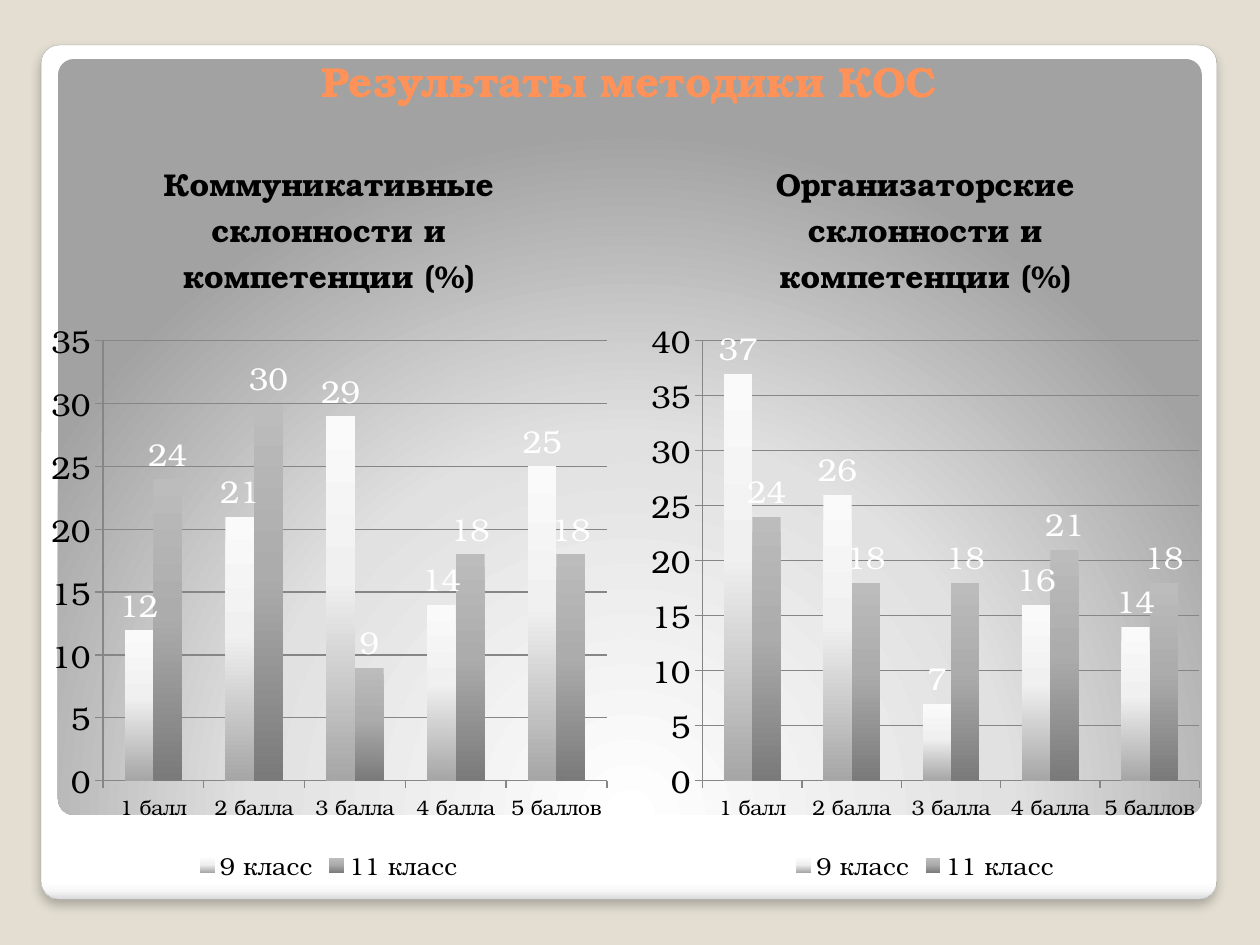
from lxml.etree import SubElement
from pptx import Presentation
from pptx.chart.data import CategoryChartData as ChartData
from pptx.dml.color import RGBColor as RGB
from pptx.enum.chart import XL_CHART_TYPE as CT, XL_LABEL_POSITION as LP
from pptx.enum.chart import XL_LEGEND_POSITION as LEG, XL_TICK_MARK as TICK
from pptx.enum.shapes import MSO_SHAPE as SHAPE
from pptx.enum.text import PP_ALIGN as ALIGN
from pptx.oxml import parse_xml
from pptx.oxml.ns import nsdecls, qn
from pptx.util import Cm, Pt

FONT = "TeX Gyre Bonum"
COLORS = {"back": "E3DED1", "title": "FF9258", "text": "000000",
          "label": "FFFFFF", "edge": "A4A4A4", "grid": "868686"}
FRAME_STOPS = [(0, "FFFFFF"), (98, "FFFFFF"), (99, "F7F7F7"), (100, "DADADA")]
PANEL_STOPS = [(0, "FFFFFF"), (55, "E1E1E1"), (100, "A2A2A2")]
BAR_STOPS = [[(0, "FAFAFA"), (45, "F0F0F0"), (100, "A6A6A6")],
             [(0, "BCBCBC"), (45, "ACACAC"), (100, "7A7A7A")]]
SCORES = ["1 балл", "2 балла", "3 балла", "4 балла", "5 баллов"]
CLASSES = ["9 класс", "11 класс"]
CHARTS = [
    ("Коммуникативные склонности и компетенции (%)", 35,
     [(12, 21, 29, 14, 25), (24, 30, 9, 18, 18)], (0.79, 2.59, 11.68, 15.29)),
    ("Организаторские склонности и компетенции (%)", 40,
     [(37, 26, 7, 16, 14), (24, 18, 18, 21, 18)], (12.9, 2.59, 11.51, 15.29)),
]


def set_font(font, size, color, bold=False):
    """Give a font the slide's typeface, a size and a colour."""
    font.name, font.size, font.bold = FONT, Pt(size), bold
    font.color.rgb = RGB.from_string(COLORS[color])


def fill_gradient(fill, element, stops, radial=False):
    """Fill with a vertical gradient, or one circling below the box."""
    fill.gradient()
    grad = next(element.iter(qn("a:gradFill")))
    for child in list(grad):
        grad.remove(child)
    gs_list = SubElement(grad, qn("a:gsLst"))
    for pos, color in stops:
        gs = SubElement(gs_list, qn("a:gs"), pos=str(pos * 1000))
        SubElement(gs, qn("a:srgbClr"), val=color)
    if radial:
        circle = SubElement(grad, qn("a:path"), path="circle")
        SubElement(circle, qn("a:fillToRect"),
                   l="50000", t="175000", r="50000", b="-75000")
    else:
        SubElement(grad, qn("a:lin"), ang="5400000", scaled="0")


def add_card(s, box, stops, radial=False):
    """Add a softly rounded card with a gradient and no outline."""
    sp = s.shapes.add_shape(SHAPE.ROUNDED_RECTANGLE, *map(Cm, box))
    sp.adjustments[0] = 0.021
    sp.shadow.inherit = False
    sp.line.fill.background()
    fill_gradient(sp.fill, sp._element, stops, radial)
    return sp


def add_background(s):
    """Add the white frame with its shadow and the grey panel."""
    fill = s.background.fill
    fill.solid()
    fill.fore_color.rgb = RGB.from_string(COLORS["back"])
    frame = add_card(s, (0.83, 0.91, 23.7, 17.22), FRAME_STOPS)
    frame.line.color.rgb = RGB.from_string(COLORS["edge"])
    frame.line.width = Pt(0.16)
    effects = next(frame._element.iter(qn("a:effectLst")))
    effects.append(parse_xml(
        f'<a:outerShdw {nsdecls("a")} blurRad="76200" dist="50800" dir="5400000"'
        ' algn="tl" rotWithShape="0"><a:srgbClr val="000000">'
        '<a:alpha val="25000"/></a:srgbClr></a:outerShdw>'))
    add_card(s, (1.17, 1.19, 23.06, 15.24), PANEL_STOPS, radial=True)


def add_title(s, box, text):
    """Add the centred slide title."""
    tf = s.shapes.add_textbox(*map(Cm, box)).text_frame
    tf.word_wrap = True
    p = tf.paragraphs[0]
    p.text, p.alignment = text, ALIGN.CENTER
    set_font(p.font, 24, "title", bold=True)


def set_plot_layout(plot_area, **fractions):
    """Place the inner plot area by fractions of the chart's size."""
    layout = plot_area.find(qn("c:layout"))
    if layout is None:
        layout = parse_xml(f'<c:layout {nsdecls("c")}/>')
        plot_area.insert(0, layout)
    manual = SubElement(layout, qn("c:manualLayout"))
    SubElement(manual, qn("c:layoutTarget"), val="inner")
    for mode in ("xMode", "yMode"):
        SubElement(manual, qn("c:" + mode), val="edge")
    for key, value in fractions.items():
        SubElement(manual, qn("c:" + key), val=str(value))


def style_axis(axis, size):
    """Style an axis with outer ticks and a grey line."""
    axis.major_tick_mark = TICK.OUTSIDE
    axis.format.line.color.rgb = RGB.from_string(COLORS["grid"])
    set_font(axis.tick_labels.font, size, "text")


def add_score_chart(s, box, title, top, values):
    """Add a column chart comparing the two classes by score."""
    data = ChartData()
    data.categories = SCORES
    for name, vals in zip(CLASSES, values):
        data.add_series(name, vals)
    chart = s.shapes.add_chart(CT.COLUMN_CLUSTERED, *map(Cm, box), data).chart
    set_font(chart.font, 18, "text")

    p = chart.chart_title.text_frame.paragraphs[0]
    p.add_run().text = title
    set_font(p.font, 18, "text", bold=True)

    chart.has_legend = True
    chart.legend.position = LEG.BOTTOM
    chart.legend.include_in_layout = False
    set_font(chart.legend.font, 14, "text")

    style_axis(chart.category_axis, 12)
    axis = chart.value_axis
    style_axis(axis, 18)
    axis.minimum_scale, axis.maximum_scale, axis.major_unit = 0, top, 5
    axis.major_gridlines.format.line.color.rgb = RGB.from_string(COLORS["grid"])

    plot = chart.plots[0]
    plot.gap_width, plot.overlap, plot.vary_by_categories = 150, 0, False
    for series, stops in zip(plot.series, BAR_STOPS):
        fill_gradient(series.format.fill, series._element, stops)
        labels = series.data_labels
        labels.show_value, labels.position = True, LP.OUTSIDE_END
        set_font(labels.font, 18, "label")
    set_plot_layout(chart._chartSpace.chart.plotArea,
                    x=0.11, y=0.28, w=0.87, h=0.58)


def main():
    """Build the slide and save it."""
    prs = Presentation()
    prs.slide_width, prs.slide_height = Cm(25.4), Cm(19.05)
    s = prs.slides.add_slide(prs.slide_layouts[6])
    add_background(s)
    for title, top, values, box in CHARTS:
        add_score_chart(s, box, title, top, values)
    add_title(s, (1.57, 0.99, 22.23, 1.27), "Результаты методики КОС")
    prs.save("out.pptx")


if __name__ == "__main__":
    main()
